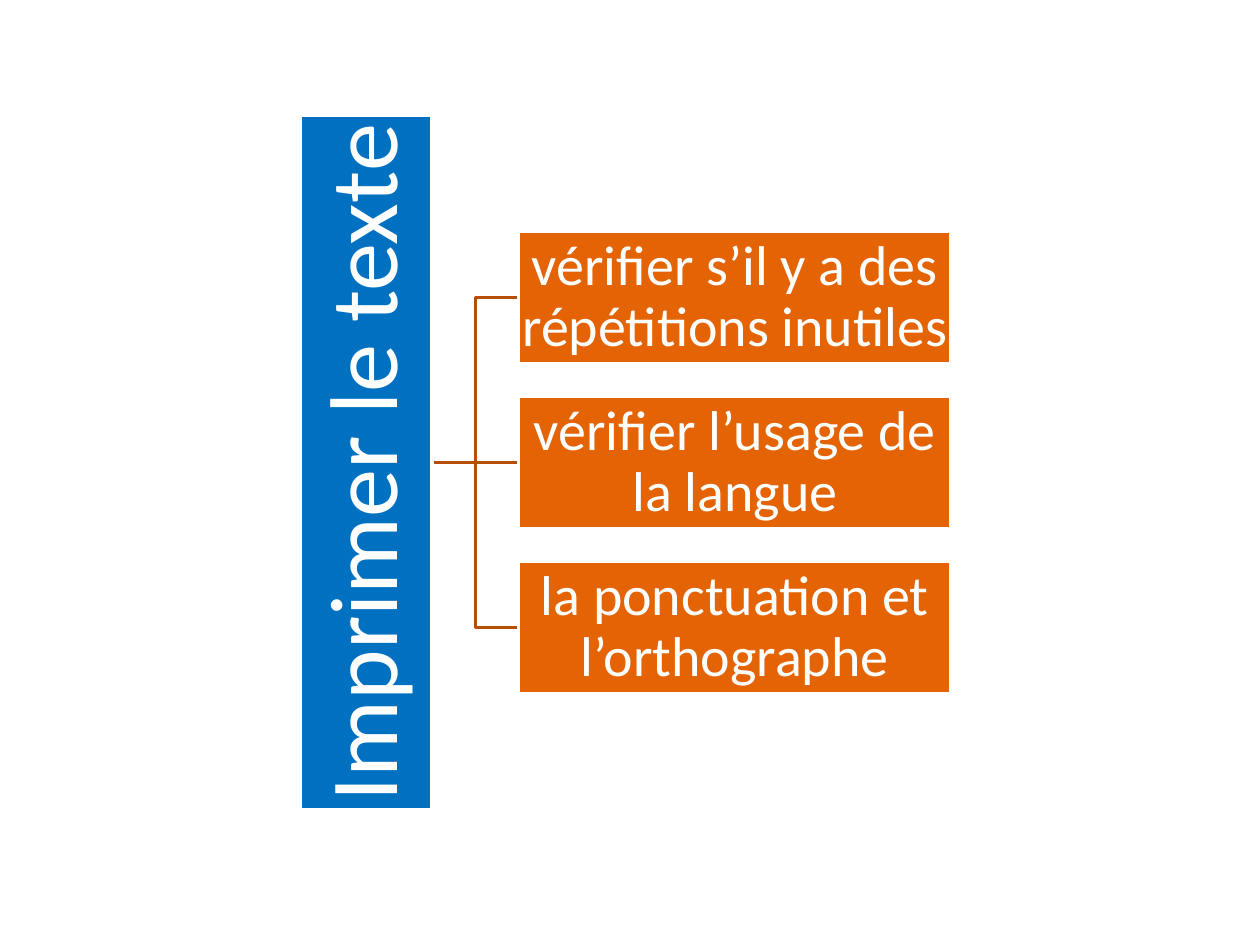
"""Build a slide with a horizontal hierarchy of proofreading steps."""
from lxml import etree
from pptx import Presentation
from pptx.dml.color import RGBColor
from pptx.enum import shapes, text
from pptx.oxml.ns import qn
from pptx.util import Pt

TASK = "Imprimer le texte"
CHECKS = [
    "vérifier s’il y a des répétitions inutiles",
    "vérifier l’usage de la langue",
    "la ponctuation et l’orthographe",
]
THEME = {
    "font": "Calibri", "task_size": 55, "check_size": 32, "text": "FFFFFF",
    "task": "0070C0", "check": "E36305", "border": "FFFFFF", "branch": "B64F04",
    "line": 2,
}
SLIDE_W, SLIDE_H = 720, 540
CENTER_Y = 264.4
BOX_H, PITCH = 75.4, 94.3
TASK_LENGTH, TASK_RIGHT = 396.6, 246.9
CHECK_LEFT, CHECK_W = 296.4, 247.2


def color(name):
    return RGBColor.from_string(THEME[name])


def add_box(slide, wording, center_x, center_y, width, role, inset):
    box = slide.shapes.add_shape(
        shapes.MSO_SHAPE.RECTANGLE, Pt(center_x - width / 2),
        Pt(center_y - BOX_H / 2), Pt(width), Pt(BOX_H))
    box.shadow.inherit = False
    box.fill.solid()
    box.fill.fore_color.rgb = color(role)
    box.line.color.rgb = color("border")
    box.line.width = Pt(THEME["line"])
    frame = box.text_frame
    frame.text = wording
    frame.word_wrap = True
    frame.vertical_anchor = text.MSO_ANCHOR.MIDDLE
    frame.margin_left = frame.margin_right = Pt(inset)
    frame.margin_top = frame.margin_bottom = Pt(inset)
    paragraph = frame.paragraphs[0]
    paragraph.alignment = text.PP_ALIGN.CENTER
    paragraph.line_spacing = 0.9
    font = paragraph.runs[0].font
    font.name = THEME["font"]
    font.size = Pt(THEME[role + "_size"])
    font.color.rgb = color("text")
    return box


def add_branch(slide, task, check, check_y):
    kind = shapes.MSO_CONNECTOR
    branch = slide.shapes.add_connector(
        kind.STRAIGHT if check_y == CENTER_Y else kind.ELBOW,
        Pt(TASK_RIGHT), Pt(CENTER_Y), Pt(CHECK_LEFT), Pt(check_y))
    branch.begin_connect(task, 2)
    branch.begin_x, branch.begin_y = Pt(TASK_RIGHT), Pt(CENTER_Y)
    branch.end_connect(check, 1)
    branch.line.color.rgb = color("branch")
    branch.line.width = Pt(THEME["line"])
    etree.SubElement(branch._element.spPr, qn("a:effectLst"))
    slide.shapes._spTree.insert(2, branch._element)


def main():
    deck = Presentation()
    deck.slide_width, deck.slide_height = Pt(SLIDE_W), Pt(SLIDE_H)
    slide = deck.slides.add_slide(deck.slide_layouts[6])
    task = add_box(slide, TASK, TASK_RIGHT - BOX_H / 2, CENTER_Y,
                   TASK_LENGTH, "task", 2.8)
    task.rotation = 270
    for index, wording in enumerate(CHECKS):
        check_y = CENTER_Y + (index - (len(CHECKS) - 1) / 2) * PITCH
        check = add_box(slide, wording, CHECK_LEFT + CHECK_W / 2, check_y,
                        CHECK_W, "check", 1.6)
        add_branch(slide, task, check, check_y)
    deck.save("out.pptx")


if __name__ == "__main__":
    main()
